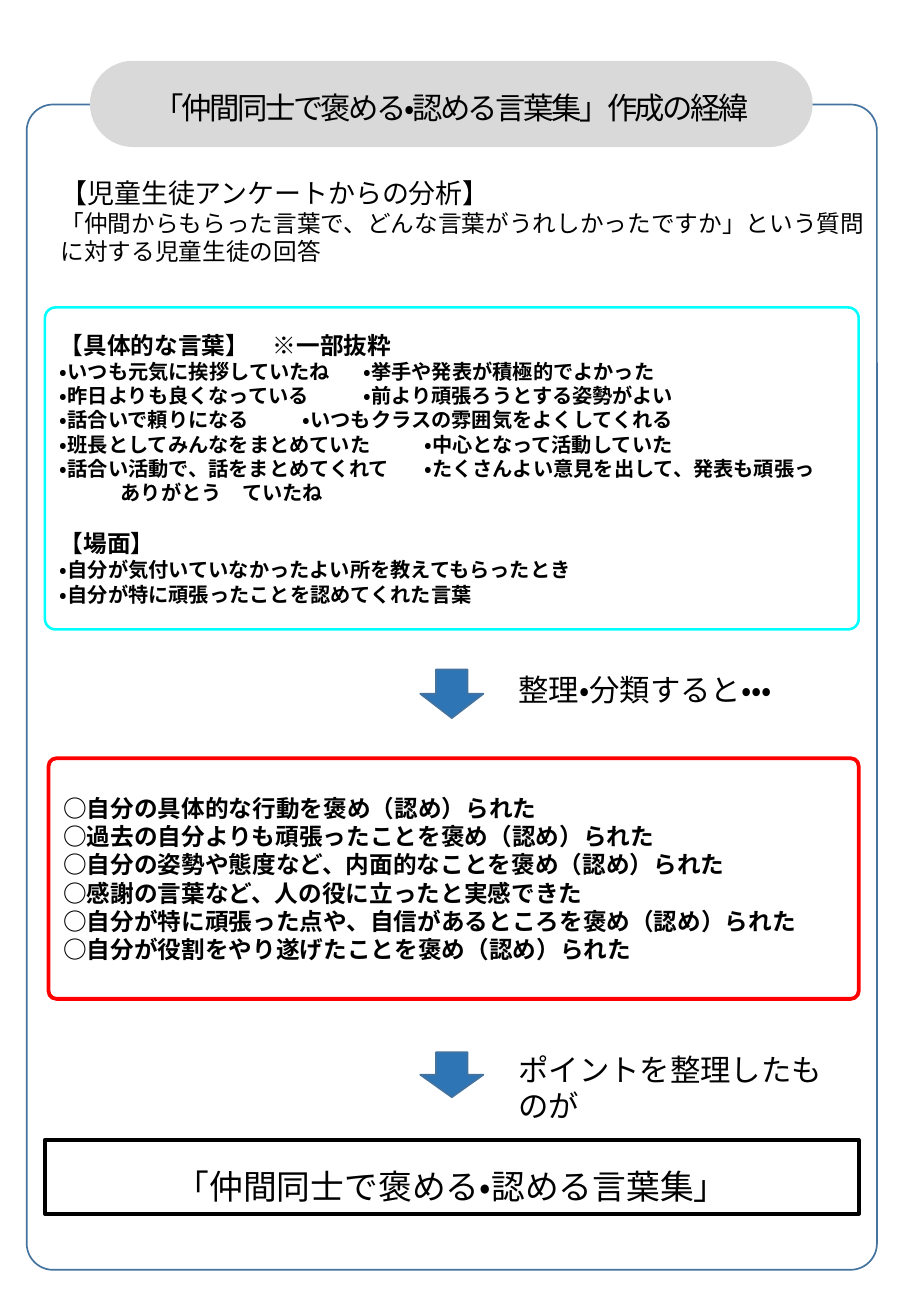
from lxml.etree import SubElement
from pptx import Presentation
from pptx.dml.color import RGBColor
from pptx.enum.shapes import MSO_SHAPE as Form
from pptx.enum.text import MSO_ANCHOR as Anchor, MSO_AUTO_SIZE as Fit, PP_ALIGN as Align
from pptx.oxml.ns import qn
from pptx.util import Pt

PX = 9144  # 100 px to the inch
FONT = "Noto Sans CJK JP"
BLACK = RGBColor(0x00, 0x00, 0x00)
WHITE = RGBColor(0xFF, 0xFF, 0xFF)
GREY = RGBColor(0xD9, 0xD9, 0xD9)
BLUE = RGBColor(0x2E, 0x75, 0xB6)
NAVY = RGBColor(0x43, 0x73, 0x9E)
CYAN = RGBColor(0x00, 0xFF, 0xFF)
RED = RGBColor(0xFF, 0x00, 0x00)

WORDS = [
    ("いつも元気に挨拶していたね", "挙手や発表が積極的でよかった"),
    ("昨日よりも良くなっている", "前より頑張ろうとする姿勢がよい"),
    ("話合いで頼りになる", "いつもクラスの雰囲気をよくしてくれる"),
    ("班長としてみんなをまとめていた", "中心となって活動していた"),
    ("話合い活動で、話をまとめてくれて", "たくさんよい意見を出して、発表も頑張っ"),
]
SCENES = [
    "・自分が気付いていなかったよい所を教えてもらったとき",
    "・自分が特に頑張ったことを認めてくれた言葉",
]
POINTS = [
    "○自分の具体的な行動を褒め（認め）られた",
    "○過去の自分よりも頑張ったことを褒め（認め）られた",
    "○自分の姿勢や態度など、内面的なことを褒め（認め）られた",
    "○感謝の言葉など、人の役に立ったと実感できた",
    "○自分が特に頑張った点や、自信があるところを褒め（認め）られた",
    "○自分が役割をやり遂げたことを褒め（認め）られた",
]


class Page:
    def __init__(self, wide, high):
        self.deck = Presentation()
        self.deck.slide_width, self.deck.slide_height = wide * PX, high * PX
        self.slide = self.deck.slides.add_slide(self.deck.slide_layouts[1])
        self.shapes = self.slide.shapes

    def shape(self, form, box, fill=None, line=None, width=1, bend=None):
        item = self.shapes.add_shape(form, *[n * PX for n in box])
        item.shadow.inherit = False
        if bend is not None:
            item.adjustments[0] = bend
        if fill is None:
            item.fill.background()
        else:
            item.fill.solid()
            item.fill.fore_color.rgb = fill
        if line is None:
            item.line.fill.background()
        else:
            item.line.color.rgb = line
            item.line.width = Pt(width)
        return item

    def note(self, box):
        return self.shapes.add_textbox(*[n * PX for n in box])

    def holder(self, index, box):
        """Move a template placeholder to box and bring it to the front."""
        item = self.slide.placeholders[index]
        item.left, item.top, item.width, item.height = [n * PX for n in box]
        self.shapes._spTree.append(item._element)
        return item

    def label(self, item, rows, anchor=Anchor.TOP, **style):
        """Fill item with rows of (text, size)."""
        frame = item.text_frame
        frame.word_wrap = True
        frame.auto_size = Fit.NONE
        frame.vertical_anchor = anchor
        for i, (text, size) in enumerate(rows):
            par = frame.paragraphs[0] if i == 0 else frame.add_paragraph()
            par.text = text
            self.dress(par, size, **style)
        return frame.paragraphs

    def dress(self, par, size, bold=False, align=Align.LEFT, lines=1.0, track=0, tabs=()):
        """Set spacing, tab stops and font of one paragraph."""
        par.alignment = align
        par.line_spacing = lines
        par.space_before = par.space_after = Pt(0)
        props = par._p.get_or_add_pPr()
        props.set("marL", "0")
        props.set("indent", "0")
        SubElement(props, qn("a:buNone"))
        if tabs:
            stops = SubElement(props, qn("a:tabLst"))
            for stop in tabs:
                SubElement(stops, qn("a:tab"), pos=str(stop * PX), algn="l")
        font = par.font
        font.name, font.size, font.bold = FONT, Pt(size), bold
        font.color.rgb = BLACK
        font._element.set("lang", "ja-JP")
        if track:
            font._element.set("spc", str(track))


def main():
    page = Page(750, 1083)
    page.shape(Form.ROUNDED_RECTANGLE, (22, 86, 700, 959), line=NAVY, bend=0.031)

    # Words from the survey, in two columns set by tab stops
    card = page.shape(Form.ROUNDED_RECTANGLE, (37, 253, 670, 265), WHITE, CYAN, 1.5, 0.033)
    rows = [("【具体的な言葉】　※一部抜粋", 14)]
    rows += [(f"・{left}\t・{right}", 12) for left, right in WORDS]
    rows += [("\tありがとう\tていたね", 12), ("【場面】", 14)]
    rows += [(text, 12) for text in SCENES]
    pars = page.label(card, rows, Anchor.MIDDLE, bold=True, tabs=(17, 300, 317))
    pars[len(WORDS) + 2].space_before = Pt(14.5)

    result = page.shape(Form.RECTANGLE, (37, 938, 670, 61), WHITE, BLACK, 2.25)
    page.label(result, [("「仲間同士で褒める・認める言葉集」", 20)], align=Align.CENTER, lines=1.5)

    page.shape(Form.ROUNDED_RECTANGLE, (40, 624, 667, 198), WHITE, RED, 2.25, 0.033)
    points = page.holder(1, (42, 624, 663, 198))
    page.label(points, [(text, 14) for text in POINTS], Anchor.MIDDLE, bold=True)

    for top, high in ((551, 40), (866, 37)):
        page.shape(Form.DOWN_ARROW, (346, top, 52, high), BLUE, NAVY)

    page.label(page.note((40, 140, 700, 85)), [
        ("【児童生徒アンケートからの分析】", 16),
        ("「仲間からもらった言葉で、どんな言葉がうれしかったですか」という質問に対する児童生徒の回答", 14),
    ])

    pill = (74, 50, 595, 71)
    page.shape(Form.ROUNDED_RECTANGLE, pill, GREY, bend=0.5)
    page.label(page.holder(0, pill), [("「仲間同士で褒める・認める言葉集」作成の経緯", 18)],
               Anchor.MIDDLE, align=Align.CENTER, lines=1.2, track=-150)

    page.label(page.note((417, 547, 305, 48)), [("整理・分類すると・・・", 18)])
    page.label(page.note((417, 860, 290, 48)), [("ポイントを整理したものが", 18)])
    page.deck.save("out.pptx")


if __name__ == "__main__":
    main()
